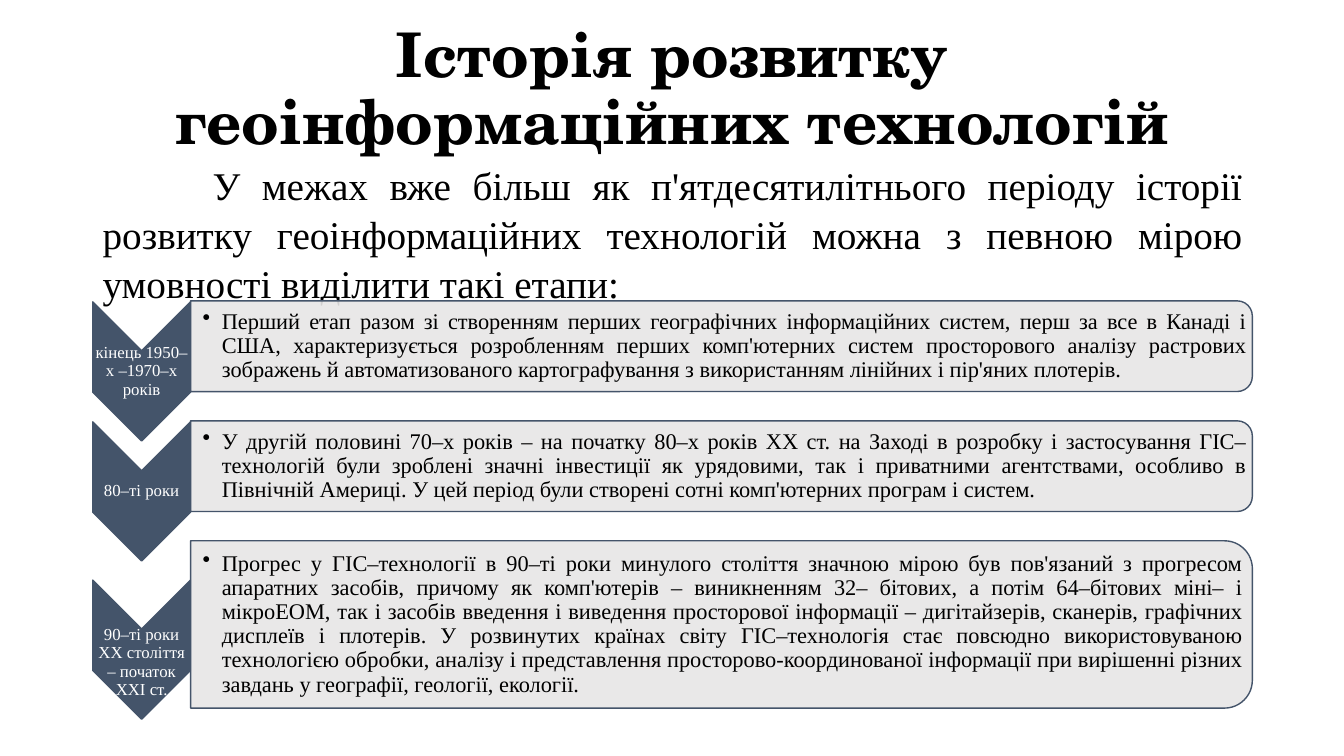
from lxml.etree import SubElement
from pptx import Presentation
from pptx.dml.color import RGBColor
from pptx.enum.shapes import MSO_SHAPE as Shape
from pptx.enum.text import MSO_ANCHOR as Anchor, PP_ALIGN as Align
from pptx.oxml.ns import qn
from pptx.util import Inches, Pt

COLORS = {"slate": "44546A", "panel": "E7E6E6", "black": "000000", "white": "FFFFFF"}
SERIF, DISPLAY = "Times New Roman", "TeX Gyre Schola"

# The grid has 100 columns and 100 rows.
SLIDE_WIDTH, SLIDE_HEIGHT = Inches(13.33), Inches(7.5)
LEFT, CONTENT_WIDTH = 6.9, 86.25
CHEVRON_WIDTH, CHEVRON_HEIGHT, CHEVRON_DROP = 7.28, 18.4, 3.33
PANEL_WIDTH = 79
PANEL_TOP, PANEL_GAP = 39.8, 3.87
LABEL_HEIGHT = 5.6
CORNER_SHARE, CORNER_INSET = 0.1667, 0.29

TITLE = "Історія розвитку геоінформаційних технологій"
INTRO = ("У межах вже більш як п'ятдесятилітнього періоду історії розвитку "
         "геоінформаційних технологій можна з певною мірою умовності виділити такі етапи:")

# Label, label shift in rows, panel height in rows, description
STAGES = [
    ("кінець 1950–х –1970–х років", 0, 12,
     "Перший етап разом зі створенням перших географічних інформаційних систем, "
     "перш за все в Канаді і США, характеризується розробленням перших комп'ютерних "
     "систем просторового аналізу растрових зображень й автоматизованого "
     "картографування з використанням лінійних і пір'яних плотерів."),
    ("80–ті роки", 0, 12,
     "У другій половині 70–х років – на початку 80–х років XX ст. на Заході в розробку "
     "і застосування ГІС–технологій були зроблені значні інвестиції як урядовими, так і "
     "приватними агентствами, особливо в Північній Америці. У цей період були створені "
     "сотні комп'ютерних програм і систем."),
    ("90–ті роки XX століття – початок XXI ст.", 1.7, 22.13,
     "Прогрес у ГІС–технології в 90–ті роки минулого століття значною мірою був "
     "пов'язаний з прогресом апаратних засобів, причому як комп'ютерів – виникненням "
     "32– бітових, а потім 64–бітових міні– і мікроЕОМ, так і засобів введення і "
     "виведення просторової інформації – дигітайзерів, сканерів, графічних дисплеїв і "
     "плотерів. У розвинутих країнах світу ГІС–технологія стає повсюдно "
     "використовуваною технологією обробки, аналізу і представлення "
     "просторово-координованої інформації при вирішенні різних завдань у географії, "
     "геології, екології."),
]


def columns(count):
    return round(SLIDE_WIDTH * count / 100)


def rows(count):
    return round(SLIDE_HEIGHT * count / 100)


def color(name):
    return RGBColor.from_string(COLORS[name])


def add_text(slide, text, left, top, width, height, *, size, font=SERIF, ink="black",
             bold=False, align=Align.JUSTIFY, anchor=Anchor.MIDDLE, spacing=0.9,
             insets=(0.01, 0.01, 0.01, 0.01), margin=0, indent=0, bullet=None):
    """Add a text box; the frame is in EMU, insets and indents in inches."""
    frame = slide.shapes.add_textbox(left, top, width, height).text_frame
    frame.word_wrap = True
    frame.vertical_anchor = anchor
    (frame.margin_left, frame.margin_top,
     frame.margin_right, frame.margin_bottom) = map(Inches, insets)
    paragraph = frame.paragraphs[0]
    paragraph.text = text
    paragraph.alignment = align
    paragraph.line_spacing = spacing
    properties = paragraph._p.get_or_add_pPr()
    properties.set("marL", str(Inches(margin)))
    properties.set("indent", str(Inches(indent)))
    if bullet:
        SubElement(properties, qn("a:buChar"), char=bullet)
    paragraph.font.size = Pt(size)
    paragraph.font.name = font
    paragraph.font.bold = bold
    paragraph.font.color.rgb = color(ink)


def add_turned_shape(slide, kind, left, top, width, height, fill, opacity=100):
    """Add a shape turned by 90 degrees that covers the given upright frame."""
    shift = (width - height) // 2
    shape = slide.shapes.add_shape(kind, left + shift, top - shift, height, width)
    shape.rotation = 90
    shape.shadow.inherit = False
    shape.fill.solid()
    shape.fill.fore_color.rgb = color(fill)
    if opacity < 100:
        tint = shape.fill._xPr.find(qn("a:solidFill"))[0]
        SubElement(tint, qn("a:alpha"), val=str(opacity * 1000))
    shape.line.color.rgb = color("slate")
    shape.line.width = Pt(1)


def add_stage(slide, top, label, label_shift, panel_height, description):
    chevron_middle = top + panel_height / 2 + CHEVRON_DROP
    add_turned_shape(slide, Shape.CHEVRON, columns(LEFT),
                     rows(chevron_middle - CHEVRON_HEIGHT / 2),
                     columns(CHEVRON_WIDTH), rows(CHEVRON_HEIGHT), "slate")
    add_text(slide, label, columns(LEFT),
             rows(chevron_middle - LABEL_HEIGHT / 2 + label_shift),
             columns(CHEVRON_WIDTH), rows(LABEL_HEIGHT),
             size=12, ink="white", align=Align.CENTER)

    panel_left = columns(LEFT + CHEVRON_WIDTH)
    panel = panel_left, rows(top), columns(PANEL_WIDTH), rows(panel_height)
    add_turned_shape(slide, Shape.ROUND_2_SAME_RECTANGLE, *panel, "panel", opacity=90)
    inset = rows(panel_height * CORNER_SHARE * CORNER_INSET)
    add_text(slide, description, panel_left, rows(top) + inset,
             columns(PANEL_WIDTH) - inset, rows(panel_height) - 2 * inset,
             size=16, insets=(0.12, 0.01, 0.01, 0.01),
             margin=0.19, indent=-0.19, bullet="•")


def main():
    presentation = Presentation()
    presentation.slide_width, presentation.slide_height = SLIDE_WIDTH, SLIDE_HEIGHT
    slide = presentation.slides.add_slide(presentation.slide_layouts[6])
    box_insets = (0.1, 0.05, 0.1, 0.05)
    add_text(slide, TITLE, columns(LEFT), rows(2.4), columns(CONTENT_WIDTH), rows(19.3),
             size=44, font=DISPLAY, bold=True, align=Align.CENTER, insets=box_insets)
    add_text(slide, INTRO, columns(LEFT), rows(20.4), columns(CONTENT_WIDTH), rows(19.4),
             size=28, anchor=Anchor.TOP, spacing=1.04, insets=box_insets, indent=1.09)
    top = PANEL_TOP
    for label, label_shift, panel_height, description in STAGES:
        add_stage(slide, top, label, label_shift, panel_height, description)
        top += panel_height + PANEL_GAP
    presentation.save("out.pptx")


if __name__ == "__main__":
    main()
